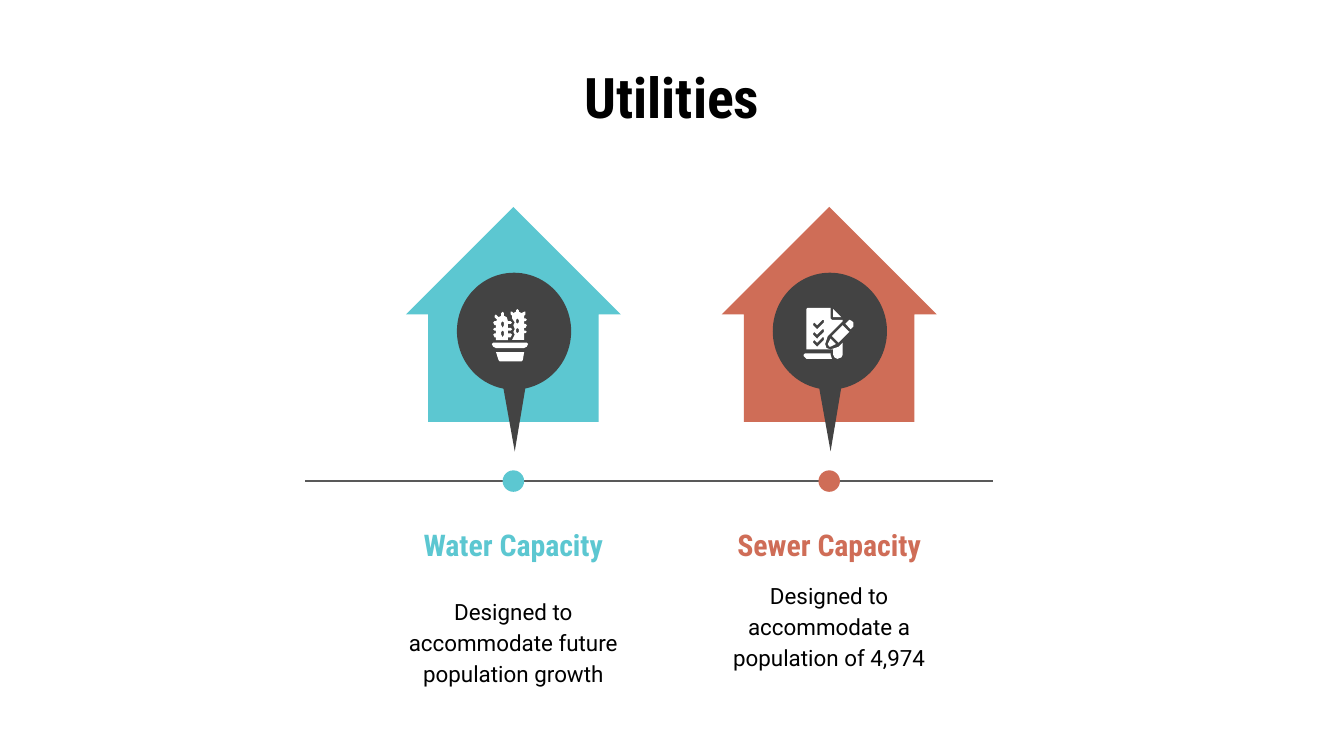
from pptx import Presentation
from pptx.dml.color import RGBColor
from pptx.enum.shapes import MSO_CONNECTOR, MSO_SHAPE
from pptx.enum.text import MSO_ANCHOR, PP_ALIGN
from pptx.oxml.ns import qn
from pptx.util import Inches, Pt
from lxml.etree import SubElement

TEAL = RGBColor(0x5C, 0xC7, 0xD1)
CORAL = RGBColor(0xCF, 0x6D, 0x57)
CHARCOAL = RGBColor(0x43, 0x43, 0x43)
GRAY = RGBColor(0x59, 0x59, 0x59)
BLACK = RGBColor(0, 0, 0)
WHITE = RGBColor(0xFF, 0xFF, 0xFF)


def shifted(outline, *drops):
    """Return one copy of the outline for each vertical shift."""
    return [[(x, y + drop) for x, y in outline] for drop in drops]


LEFT_STEM = [
    (8, 2), (7, 3), (7, 5), (5, 6), (4, 5), (3, 4), (2, 5), (2, 6), (4, 8),
    (3, 9), (2, 9), (1, 10), (2, 12), (3, 12), (3, 14), (2, 14), (1, 15),
    (2, 16), (3, 16), (3, 18), (2, 18), (1, 19), (2, 21), (3, 21), (3, 23),
    (12, 23), (12, 21), (14, 21), (15, 19), (14, 18), (12, 18), (12, 16),
    (14, 16), (15, 15), (14, 14), (12, 14), (12, 11), (14, 11), (15, 10),
    (14, 9), (12, 9), (11, 6.5), (9, 5), (9, 3)]
RIGHT_STEM = [
    (19, 0), (18, 1), (18, 2), (16, 3), (15, 2), (14, 2), (14, 4), (15, 5),
    (15, 7), (17, 10), (16, 12), (17, 15), (16, 17), (17, 19), (15, 23),
    (24, 23), (24, 18), (25, 18), (26, 17), (25, 16), (24, 16), (24, 14),
    (25, 14), (26, 12), (25, 11), (24, 11), (24, 9), (25, 9), (26, 8),
    (25, 7), (24, 7), (24, 5), (25, 4), (25, 2), (24, 2), (22, 3), (20, 2),
    (20, 1)]
LEFT_SPOT = [(8, 9), (9, 10), (9, 12), (8, 14), (7, 12), (7, 10)]
RIGHT_SPOT = [(19, 7), (20, 8), (20, 10), (19, 11), (18, 10), (18, 8)]
RIM = [(1, 25), (0, 26), (1, 28), (3, 29), (24, 29), (26, 28), (27, 26), (26, 25)]
POT = [(3, 32), (5, 38), (6, 39), (22, 39), (23, 38), (24, 32)]
CACTUS = [
    [LEFT_STEM, *shifted(LEFT_SPOT, 0, 7)], [POT], [RIM],
    [RIGHT_STEM, *shifted(RIGHT_SPOT, 0, 7)]]

SHEET = [
    (3, 0), (2, 1), (2, 31), (22, 31), (22, 35), (23, 37), (25, 38), (28, 37),
    (29, 35), (29, 26), (26, 29), (20, 31), (17, 30), (16, 27), (18, 21),
    (29, 10), (29, 9), (21, 9), (20, 8), (20, 0)]
TICK = [
    (14, 9), (15, 9), (15, 11), (11, 15), (10, 16), (9, 15), (7, 13), (7, 12),
    (8, 11), (10, 13)]
ERASER = [(34, 9), (33, 10), (31, 12), (35, 16), (37, 14), (37, 11), (36, 10)]
TIP = [(20, 23), (18, 27), (19, 29), (20, 29), (24, 27)]
BARREL = [(29, 13), (21, 21), (26, 26), (34, 18)]
FOLD = [(22, 1), (22, 7), (28, 7)]
SCROLL = [(1, 34), (0, 35), (0, 36), (2, 38), (21, 38), (20, 35), (20, 34)]
CHECKLIST = [
    [SHEET, *shifted(TICK, 0, 7, 13)], [ERASER], [TIP], [BARREL], [FOLD], [SCROLL]]

COLUMNS = [
    ("Water Capacity", "Designed to accommodate future population growth",
     TEAL, CACTUS, 0.82, 0.76, 2.78),
    ("Sewer Capacity", "Designed to accommodate a population of 4,974",
     CORAL, CHECKLIST, 0.79, 0.75, 2.66)]


def paint(shape, color):
    """Give a shape a flat fill without outline or shadow."""
    shape.shadow.inherit = False
    shape.fill.solid()
    shape.fill.fore_color.rgb = color
    shape.line.fill.background()


def add_preset(page, kind, left, top, width, height, color, adjustments=()):
    """Place a flat preset shape."""
    shape = page.shapes.add_shape(
        kind, Inches(left), Inches(top), Inches(width), Inches(height))
    for index, value in enumerate(adjustments):
        shape.adjustments[index] = value
    paint(shape, color)


def add_text(page, left, top, width, height, text, font, size, color,
             bold=False, anchor=MSO_ANCHOR.MIDDLE):
    """Place centred text and return its paragraph."""
    box = page.shapes.add_textbox(
        Inches(left), Inches(top), Inches(width), Inches(height))
    frame = box.text_frame
    frame.word_wrap = True
    frame.vertical_anchor = anchor
    frame.margin_left = frame.margin_right = Inches(0.1)
    frame.margin_top = frame.margin_bottom = Inches(0.1)
    para = frame.paragraphs[0]
    para.alignment = PP_ALIGN.CENTER
    span = para.add_run()
    span.text = text
    span.font.name = font
    span.font.size = Pt(size)
    span.font.bold = bold
    span.font.color.rgb = color
    return para


def add_icon(page, left, top, parts):
    """Draw white icon parts given in hundredths of an inch."""
    for outlines in parts:
        builder = page.shapes.build_freeform(*outlines[0][0], scale=Inches(0.01))
        builder.add_line_segments(outlines[0][1:], close=True)
        for hole in outlines[1:]:
            builder.move_to(*hole[0])
            builder.add_line_segments(hole[1:], close=True)
        paint(builder.convert_to_shape(Inches(left), Inches(top)), WHITE)


def add_timeline(page, left, top, width):
    """Draw the horizontal line that carries the dots."""
    line = page.shapes.add_connector(
        MSO_CONNECTOR.STRAIGHT, Inches(left), Inches(top),
        Inches(left + width), Inches(top))
    line.line.color.rgb = GRAY
    line.line.width = Pt(0.75)
    SubElement(line._element.spPr, qn("a:effectLst"))


def add_utility(page, left, top, width, heading, detail, color, icon,
                icon_left, icon_top, detail_top):
    """Draw one utility column: house, pin, icon, dot and texts."""
    add_preset(page, MSO_SHAPE.UP_ARROW, left + 0.18, top, 1.6, 1.6, color,
               (0.793, 0.5))
    add_preset(page, MSO_SHAPE.OVAL_CALLOUT, left + 0.56, top + 0.49, 0.85, 0.87,
               CHARCOAL, (0.006, 1.028))
    add_icon(page, left + icon_left, top + icon_top, icon)
    add_preset(page, MSO_SHAPE.OVAL, left + 0.9, top + 1.96, 0.16, 0.16, color)
    add_text(page, left, top + 2.36, width, 0.3, heading, "Roboto Condensed", 16,
             color, bold=True)
    para = add_text(page, left, top + detail_top, width, 0.62, detail, "Roboto",
                    12, BLACK, anchor=MSO_ANCHOR.TOP)
    para.line_spacing = 1.15
    para.space_after = Pt(16)


def main():
    """Build and save the utilities slide."""
    deck = Presentation()
    deck.slide_width = Inches(10)
    deck.slide_height = Inches(10) * 9 // 16
    page = deck.slides.add_slide(deck.slide_layouts[6])
    add_timeline(page, 2.27, 3.58, 5.12)
    add_text(page, 0.5, 0.45, 9, 0.53, "Utilities", "Roboto Condensed", 30, BLACK,
             bold=True)
    for index, column in enumerate(COLUMNS):
        add_utility(page, 2.84 + 2.35 * index, 1.54, 1.96, *column)
    deck.save("out.pptx")


if __name__ == "__main__":
    main()
